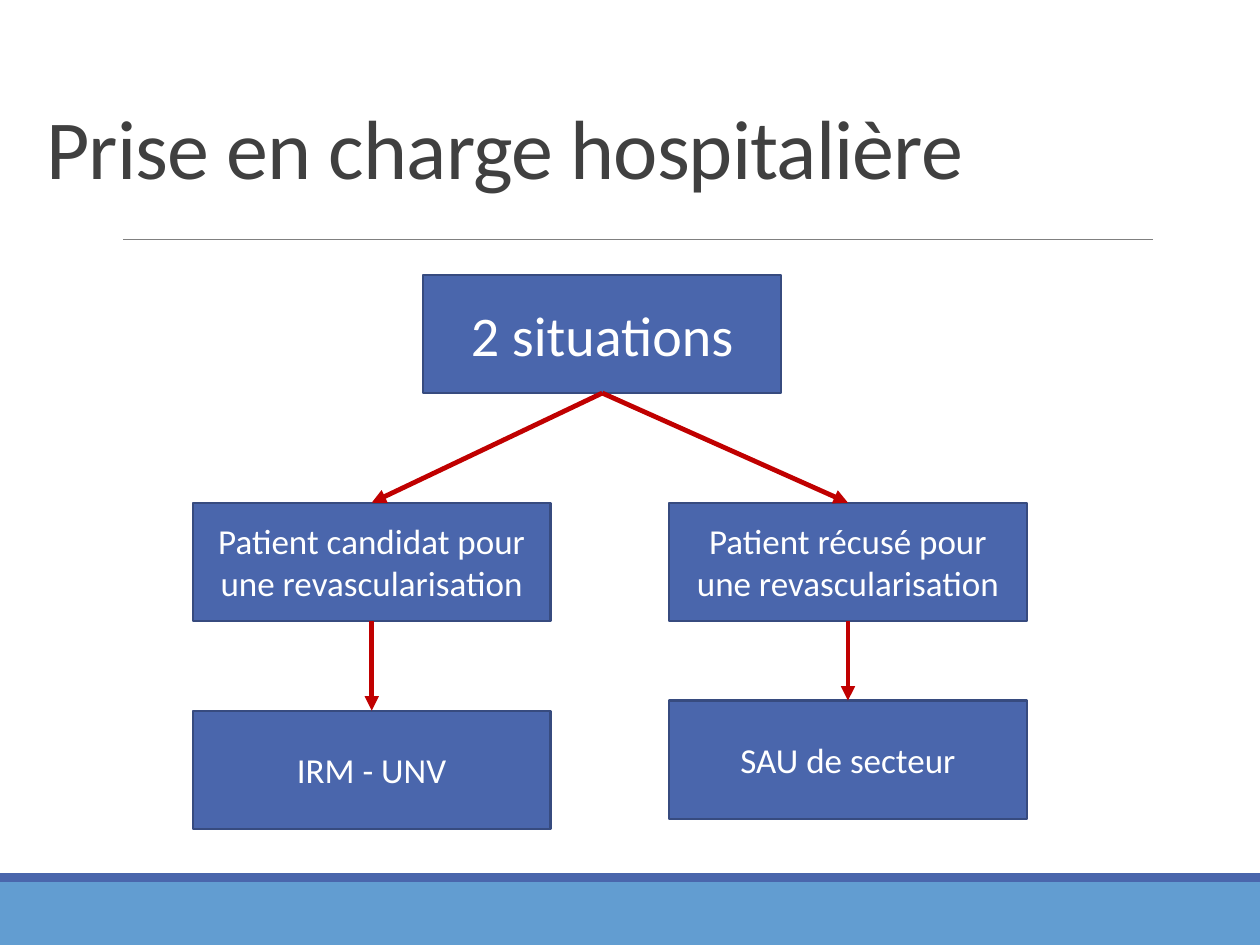
from lxml import etree
from pptx import Presentation
from pptx.dml.color import RGBColor
from pptx.enum.shapes import MSO_CONNECTOR, MSO_SHAPE
from pptx.enum.text import MSO_ANCHOR, PP_ALIGN
from pptx.oxml.ns import qn
from pptx.util import Inches, Pt

RECT = MSO_SHAPE.RECTANGLE
LINE = MSO_CONNECTOR.STRAIGHT
MIDDLE, BOTTOM = MSO_ANCHOR.MIDDLE, MSO_ANCHOR.BOTTOM
CENTER, LEFT = PP_ALIGN.CENTER, PP_ALIGN.LEFT
TOP_SITE, LOW_SITE = 0, 2

BLUE, EDGE, SKY = "4A66AC", "374B7F", "629DD1"
RED, GRAY, DARK, WHITE = "C00000", "808080", "404040", "FFFFFF"
WIDE, HIGH = 2.84, 0.94


def tint(part, code):
    part.rgb = RGBColor.from_string(code)


def apply(part, values):
    for name, value in values.items():
        setattr(part, name, value)


def write(shape, text, size, code, align, anchor):
    frame = shape.text_frame
    apply(frame, {"word_wrap": True, "vertical_anchor": anchor})
    para = frame.paragraphs[0]
    para.alignment = align
    run = para.add_run()
    run.text = text
    apply(run.font, {"name": "Calibri", "size": Pt(size)})
    tint(run.font.color, code)
    return para, run


def add_rect(slide, box, fill, edge=None):
    shape = slide.shapes.add_shape(RECT, *map(Inches, box))
    shape.shadow.inherit = False
    shape.fill.solid()
    tint(shape.fill.fore_color, fill)
    if edge:
        tint(shape.line.color, edge)
        shape.line.width = Pt(1.25)
    else:
        shape.line.fill.background()
    return shape


def add_line(slide, ends, code, width):
    line = slide.shapes.add_connector(LINE, *map(Inches, ends))
    tint(line.line.color, code)
    line.line.width = Pt(width)
    props = line._element.spPr
    etree.SubElement(props, qn("a:effectLst"))
    return line


def add_arrow(slide, start, end):
    line = add_line(slide, (0, 0, 1, 1), RED, 2.75)
    line.begin_connect(start, LOW_SITE)
    line.end_connect(end, TOP_SITE)
    stroke = line.line._get_or_add_ln()
    etree.SubElement(stroke, qn("a:tailEnd"), type="triangle")


def add_node(slide, left, top, text, size=20):
    node = add_rect(slide, (left, top, WIDE, HIGH), BLUE, EDGE)
    write(node, text, size, WHITE, CENTER, MIDDLE)
    return node


def add_footer(slide, left, top, width, height):
    strip = 0.07
    add_rect(slide, (left, top + strip, width, height - strip), SKY)
    add_rect(slide, (left, top, width, strip), BLUE)


def add_title(slide, left, top, width, height, text):
    box = slide.shapes.add_textbox(*map(Inches, (left, top, width, height)))
    para, run = write(box, text, 48, DARK, LEFT, BOTTOM)
    para.line_spacing = 0.85
    run._r.get_or_add_rPr().set("spc", "-50")
    rule = top + height + 0.29
    add_line(slide, (0.98, rule, 9.15, rule), GRAY, 0.5)


def add_tree(slide, left, top):
    root = add_node(slide, left + 1.83, top, "2 situations", 32)
    paths = (
        (0, "Patient candidat pour une revascularisation", 3.46, "IRM - UNV"),
        (3.78, "Patient récusé pour une revascularisation", 3.38, "SAU de secteur"),
    )
    for shift, case, drop, place in paths:
        branch = add_node(slide, left + shift, top + 1.81, case)
        leaf = add_node(slide, left + shift, top + drop, place)
        add_arrow(slide, root, branch)
        add_arrow(slide, branch, leaf)


def main():
    deck = Presentation()
    apply(deck, {"slide_width": Inches(10), "slide_height": Inches(7.5)})
    slide = deck.slides.add_slide(deck.slide_layouts[6])
    add_footer(slide, 0, 6.93, 10, 0.57)
    add_title(slide, 0.27, 0.36, 9, 1.25, "Prise en charge hospitalière")
    add_tree(slide, 1.53, 2.18)
    deck.save("out.pptx")


if __name__ == "__main__":
    main()
